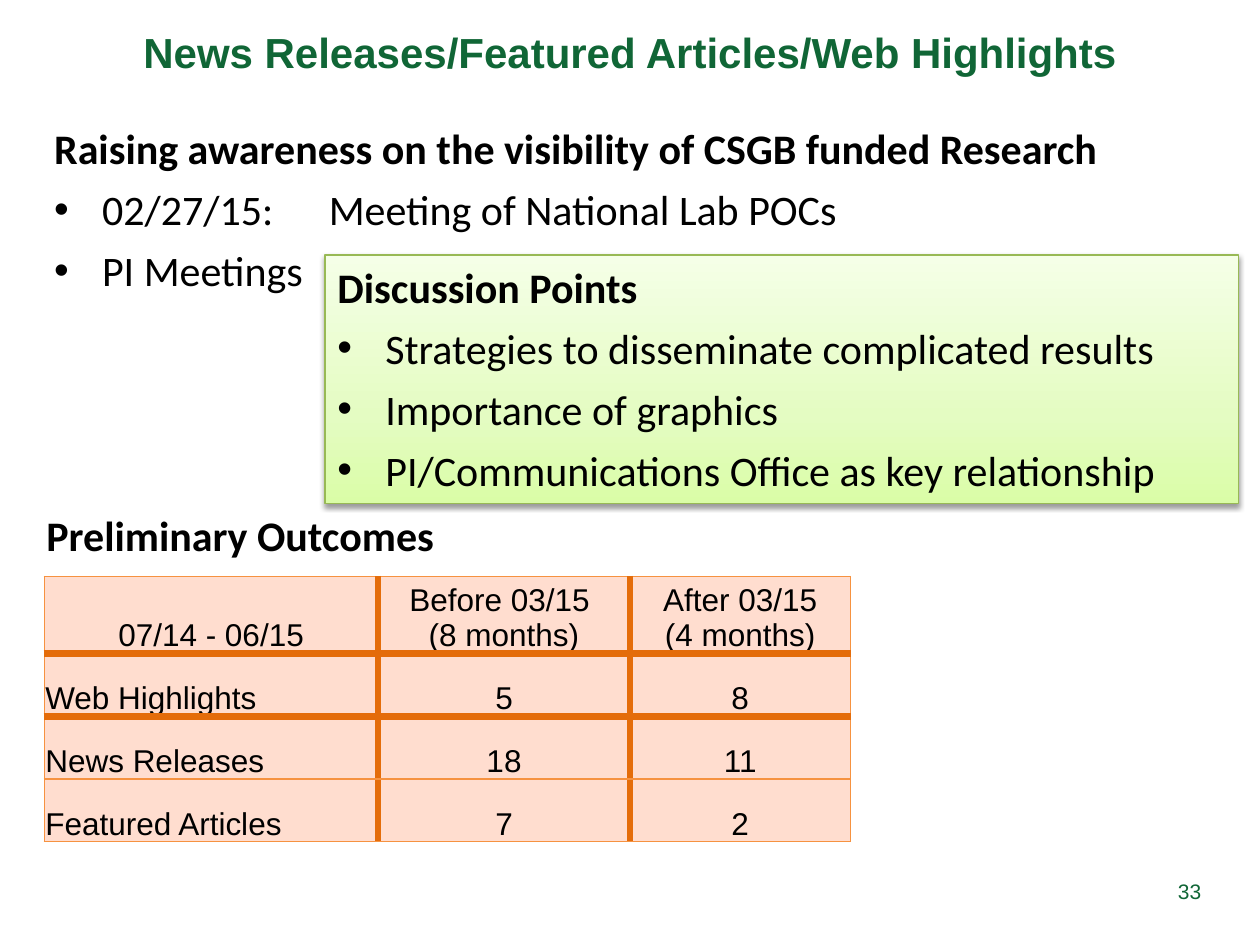
from lxml import etree
from pptx import Presentation
from pptx import util as u
from pptx.dml.color import RGBColor
from pptx.enum import shapes, text
from pptx.oxml import parse_xml
from pptx.oxml.ns import nsdecls, qn

WIDTH, HEIGHT = u.Inches(10), u.Inches(7.5)
COLORS = {
    "green": "106636", "ink": "000000", "cell": "FFDDCF",
    "thin": "F69240", "thick": "E46C0A", "panel_edge": "98B955",
}
PANEL_STOPS = [(0, "DAFDA7"), (35, "E4FCC2"), (100, "F5FFE7")]
INDENT = u.Inches(0.38)
TAB = u.Inches(2.18)

AWARENESS = [
    "Raising awareness on the visibility of CSGB funded Research",
    "02/27/15: \tMeeting of National Lab POCs",
    "PI Meetings",
]
DISCUSSION = [
    "Discussion Points",
    "Strategies to disseminate complicated results",
    "Importance of graphics",
    "PI/Communications Office as key relationship",
]
OUTCOMES = [
    ["07/14 - 06/15", "Before 03/15 \n(8 months)", "After 03/15\n(4 months)"],
    ["Web Highlights", "5", "8"],
    ["News Releases", "18", "11"],
    ["Featured Articles", "7", "2"],
]
COLUMNS = [2.65, 2, 1.75]
ROWS = [0.61, 0.5, 0.5, 0.5]
THICK_RULES = {"column": {1, 2}, "row": {1, 2}}


def rgb(name):
    """Return the named colour."""
    return RGBColor.from_string(COLORS[name])


def share(left, top, width, height):
    """Turn shares of the slide into a box of lengths."""
    return (int(left * WIDTH), int(top * HEIGHT),
            int(width * WIDTH), int(height * HEIGHT))


def place(shape, box):
    """Move a shape to its box."""
    shape.left, shape.top, shape.width, shape.height = box


def style(paragraph, size, face, color="ink", bold=False,
          align=text.PP_ALIGN.LEFT):
    """Set the alignment and font of a paragraph."""
    paragraph.alignment = align
    font = paragraph.font
    font.size, font.name, font.bold = u.Pt(size), face, bold
    font.color.rgb = rgb(color)


def set_bullet(paragraph, tab=None):
    """Give a paragraph a hanging bullet and an optional tab stop."""
    props = paragraph._p.get_or_add_pPr()
    props.set("marL", str(INDENT))
    props.set("indent", str(-INDENT))
    etree.SubElement(props, qn("a:buFont"), typeface="Arial")
    etree.SubElement(props, qn("a:buChar"), char="•")
    if tab:
        stops = etree.SubElement(props, qn("a:tabLst"))
        etree.SubElement(stops, qn("a:tab"), pos=str(tab), algn="l")


def set_plain(paragraph):
    """Remove the inherited bullet and indent of a paragraph."""
    props = paragraph._p.get_or_add_pPr()
    props.set("marL", "0")
    props.set("indent", "0")
    etree.SubElement(props, qn("a:buNone"))


def fill_list(frame, lines):
    """Write a bold heading followed by bulleted lines."""
    frame.word_wrap = True
    frame.auto_size = text.MSO_AUTO_SIZE.NONE
    for index, line in enumerate(lines):
        paragraph = frame.paragraphs[0] if index == 0 else frame.add_paragraph()
        paragraph.text = line
        if index:
            set_bullet(paragraph, TAB if "\t" in line else None)
        else:
            set_plain(paragraph)
        paragraph.space_before = u.Pt(6 if index else 0)
        style(paragraph, 24, "Calibri", bold=index == 0)


def add_heading(slide, box):
    """Fill the title placeholder."""
    title = slide.shapes.title
    place(title, box)
    frame = title.text_frame
    frame.text = "News Releases/Featured Articles/Web Highlights"
    frame.vertical_anchor = text.MSO_ANCHOR.MIDDLE
    style(frame.paragraphs[0], 24, "Arial", "green", True, text.PP_ALIGN.CENTER)


def add_awareness(slide, box):
    """Fill the body placeholder with the awareness list."""
    body = slide.placeholders[1]
    place(body, box)
    fill_list(body.text_frame, AWARENESS)


def add_discussion(slide, box):
    """Draw the shaded panel of discussion points."""
    panel = slide.shapes.add_shape(shapes.MSO_SHAPE.RECTANGLE, *box)
    panel.line.color.rgb = rgb("panel_edge")
    panel.line.width = u.Pt(0.75)
    stops = "".join(
        f'<a:gs pos="{at * 1000}"><a:srgbClr val="{color}"/></a:gs>'
        for at, color in PANEL_STOPS)
    props = panel._element.spPr
    props.find(qn("a:prstGeom")).addnext(parse_xml(
        f'<a:gradFill {nsdecls("a")} rotWithShape="1"><a:gsLst>{stops}</a:gsLst>'
        '<a:lin ang="16200000" scaled="0"/></a:gradFill>'))
    props.append(parse_xml(
        f'<a:effectLst {nsdecls("a")}><a:outerShdw blurRad="40000" dist="20000" '
        'dir="5400000" rotWithShape="0"><a:srgbClr val="000000">'
        '<a:alpha val="38000"/></a:srgbClr></a:outerShdw></a:effectLst>'))
    panel.text_frame.vertical_anchor = text.MSO_ANCHOR.TOP
    fill_list(panel.text_frame, DISCUSSION)


def add_label(slide, box, words, **look):
    """Write one unwrapped line."""
    frame = slide.shapes.add_textbox(*box).text_frame
    frame.word_wrap = False
    frame.text = words
    style(frame.paragraphs[0], **look)


def set_borders(cell, row, column):
    """Rule the four sides of a cell, thick along the chosen grid lines."""
    props = cell._tc.get_or_add_tcPr()
    sides = [("L", "column", column), ("R", "column", column + 1),
             ("T", "row", row), ("B", "row", row + 1)]
    for index, (side, axis, rule) in enumerate(sides):
        thick = rule in THICK_RULES[axis]
        color = COLORS["thick" if thick else "thin"]
        width = u.Pt(4.5 if thick else 0.75)
        props.insert(index, parse_xml(
            f'<a:ln{side} {nsdecls("a")} w="{width}"><a:solidFill>'
            f'<a:srgbClr val="{color}"/></a:solidFill></a:ln{side}>'))


def add_outcomes(slide, box):
    """Build the table of outcomes before and after the meeting."""
    table = slide.shapes.add_table(len(ROWS), len(COLUMNS), *box).table
    for sizes, lines, name in ((COLUMNS, table.columns, "width"),
                               (ROWS, table.rows, "height")):
        total = sum(sizes)
        for line, size in zip(lines, sizes):
            setattr(line, name, int(getattr_box(box, name) * size / total))
    for row, values in enumerate(OUTCOMES):
        for column, value in enumerate(values):
            cell = table.cell(row, column)
            cell.text = value
            cell.fill.solid()
            cell.fill.fore_color.rgb = rgb("cell")
            cell.vertical_anchor = text.MSO_ANCHOR.BOTTOM
            cell.margin_left = cell.margin_right = cell.margin_top = u.Inches(0.01)
            cell.margin_bottom = 0
            centred = row == 0 or column > 0
            align = text.PP_ALIGN.CENTER if centred else text.PP_ALIGN.LEFT
            for paragraph in cell.text_frame.paragraphs:
                style(paragraph, 18, "Arial", align=align)
            set_borders(cell, row, column)


def getattr_box(box, name):
    """Return the width or height of a box."""
    return box[2] if name == "width" else box[3]


def main():
    """Build and save the slide."""
    deck = Presentation()
    deck.slide_width, deck.slide_height = WIDTH, HEIGHT
    slide = deck.slides.add_slide(deck.slide_layouts[1])
    add_heading(slide, share(0, -0.03, 1, 0.17))
    add_awareness(slide, share(0.033, 0.123, 0.85, 0.2))
    add_discussion(slide, share(0.258, 0.27, 0.725, 0.263))
    add_outcomes(slide, share(0.035, 0.61, 0.64, 0.281))
    add_label(slide, share(0.027, 0.533, 0.331, 0.067), "Preliminary Outcomes",
              size=24, face="Calibri", bold=True)
    add_label(slide, share(0.925, 0.923, 0.039, 0.04), "33",
              size=12, face="Arial", color="green")
    deck.save("out.pptx")


if __name__ == "__main__":
    main()
